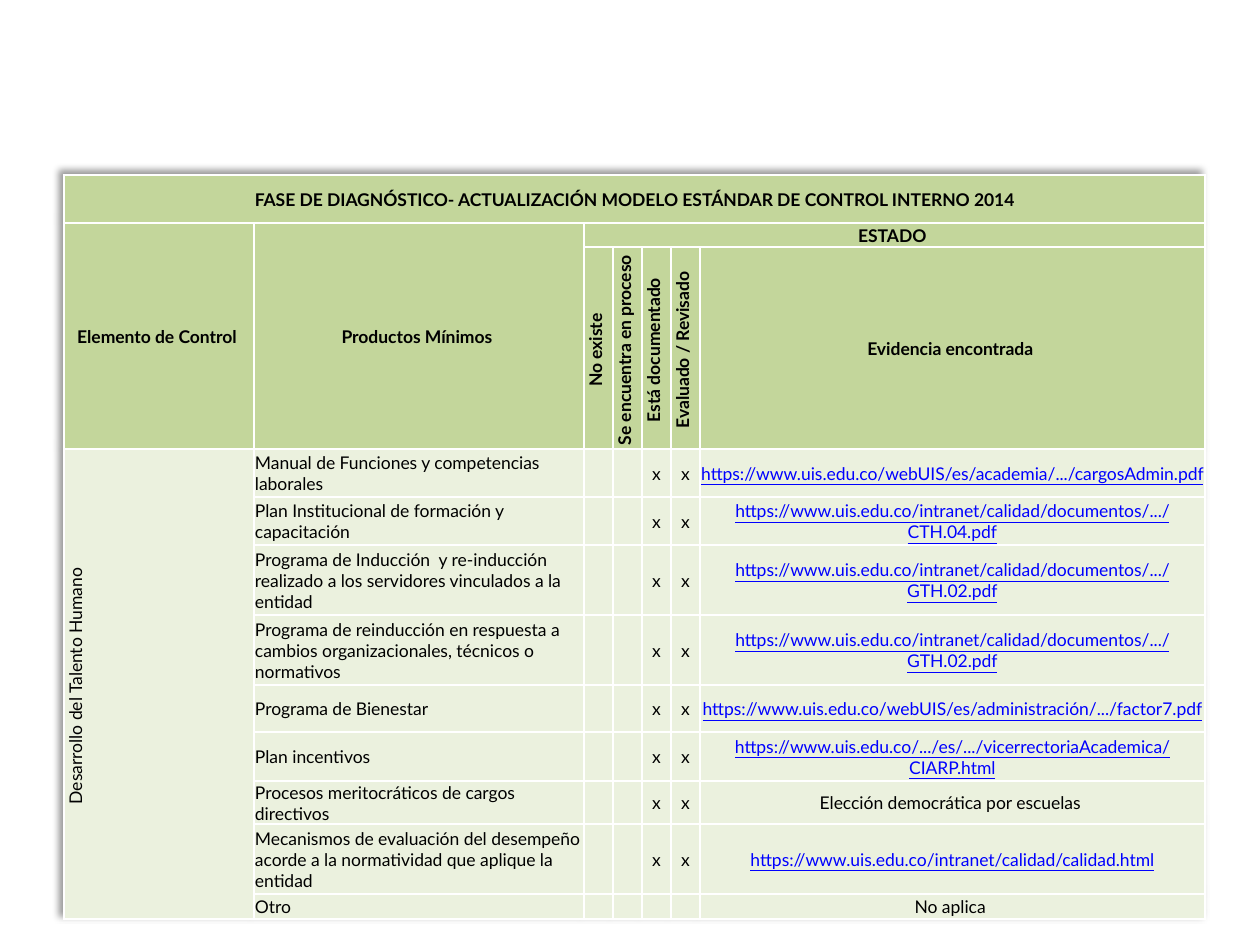
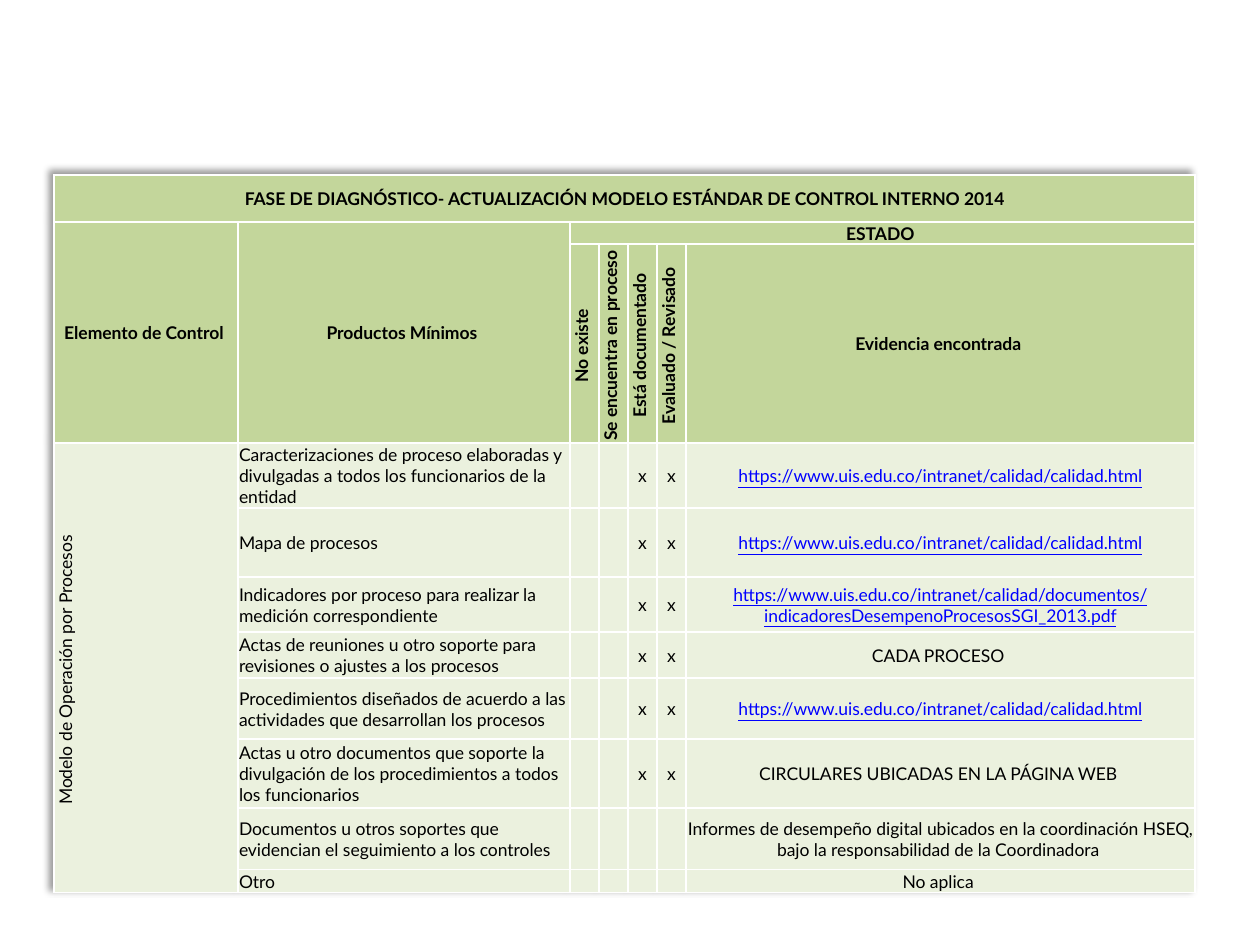
from dataclasses import dataclass

from lxml.etree import SubElement
from pptx import Presentation
from pptx.dml.color import RGBColor
from pptx.enum.text import MSO_ANCHOR, PP_ALIGN
from pptx.oxml import parse_xml
from pptx.oxml.ns import nsdecls, qn
from pptx.util import Pt

PX_PER_INCH = 126
BLANK_LAYOUT = 6
TABLE_TOP = 175
STATE_WIDTH = 29
CELL_MARGIN = 1
FIRST_PRODUCT_ROW = 3

HEADING = "FASE DE DIAGNÓSTICO- ACTUALIZACIÓN MODELO ESTÁNDAR DE CONTROL INTERNO 2014"
STATES = ["No existe ", "Se encuentra en proceso ", "Está documentado ", "Evaluado / Revisado "]
NOT_MET = ["", "", "", ""]
DOCUMENTED_AND_REVIEWED = ["", "", "x", "x"]
QUALITY_PAGE = "https://www.uis.edu.co/intranet/calidad/calidad.html"
QUALITY_DOCUMENTS = "https://www.uis.edu.co/intranet/calidad/documentos/"


@dataclass(frozen=True)
class Theme:
    font: str = "Lato"
    size: int = 10
    text: str = "000000"
    link: str = "0000FF"
    header: str = "C3D69B"
    body: str = "EBF1DE"
    border: str = "FFFFFF"
    border_width: int = 1


@dataclass(frozen=True)
class Product:
    height: int
    name: str
    evidence: str
    states: list


@dataclass(frozen=True)
class ControlElement:
    name: str
    left: int
    element_width: int
    product_width: int
    evidence_width: int
    header_heights: list
    products: list


THEME = Theme()

HUMAN_TALENT = ControlElement(
    "Desarrollo del Talento Humano ", 64, 190, 330, 505, [48, 24, 202],
    [
        Product(48, "Manual de Funciones y competencias laborales",
                "https://www.uis.edu.co/webUIS/es/academia/.../cargosAdmin.pdf", DOCUMENTED_AND_REVIEWED),
        Product(48, "Plan Institucional de formación y capacitación",
                QUALITY_DOCUMENTS + ".../CTH.04.pdf", DOCUMENTED_AND_REVIEWED),
        Product(70, "Programa de Inducción  y re-inducción realizado a los servidores vinculados a la entidad",
                QUALITY_DOCUMENTS + ".../GTH.02.pdf", DOCUMENTED_AND_REVIEWED),
        Product(70, "Programa de reinducción en respuesta a cambios organizacionales, técnicos o normativos",
                QUALITY_DOCUMENTS + ".../GTH.02.pdf", DOCUMENTED_AND_REVIEWED),
        Product(47, "Programa de Bienestar",
                "https://www.uis.edu.co/webUIS/es/administración/.../factor7.pdf", DOCUMENTED_AND_REVIEWED),
        Product(49, "Plan incentivos",
                "https://www.uis.edu.co/.../es/.../vicerrectoriaAcademica/CIARP.html", DOCUMENTED_AND_REVIEWED),
        Product(43, "Procesos meritocráticos de cargos directivos",
                "Elección democrática por escuelas ", DOCUMENTED_AND_REVIEWED),
        Product(70, "Mecanismos de evaluación del desempeño acorde a la normatividad que aplique la entidad",
                QUALITY_PAGE, DOCUMENTED_AND_REVIEWED),
        Product(25, "Otro", "No aplica ", NOT_MET),
    ],
)

PROCESS_MODEL = ControlElement(
    "Modelo de Operación por Procesos ", 54, 184, 332, 509, [47, 22, 199],
    [
        Product(65, "Caracterizaciones de proceso elaboradas y divulgadas a todos los funcionarios de la entidad",
                QUALITY_PAGE, DOCUMENTED_AND_REVIEWED),
        Product(69, "Mapa de procesos", QUALITY_PAGE, DOCUMENTED_AND_REVIEWED),
        Product(55, "Indicadores por proceso para realizar la medición correspondiente",
                QUALITY_DOCUMENTS + "indicadoresDesempenoProcesosSGI_2013.pdf", DOCUMENTED_AND_REVIEWED),
        Product(46, "Actas de reuniones u otro soporte para revisiones o ajustes a los procesos",
                "CADA PROCESO ", DOCUMENTED_AND_REVIEWED),
        Product(61, "Procedimientos diseñados de acuerdo a las actividades que desarrollan los procesos",
                QUALITY_PAGE, DOCUMENTED_AND_REVIEWED),
        Product(69, "Actas u otro documentos que soporte la divulgación de los procedimientos a todos los funcionarios",
                "CIRCULARES UBICADAS EN LA PÁGINA WEB ", DOCUMENTED_AND_REVIEWED),
        Product(62, "Documentos u otros soportes que evidencian el seguimiento a los controles",
                "Informes de desempeño digital ubicados en la coordinación HSEQ, "
                "bajo la responsabilidad de la Coordinadora ", NOT_MET),
        Product(23, "Otro", "No aplica ", NOT_MET),
    ],
)


def px(length):
    return round(length * 914400 / PX_PER_INCH)


def add_borders(cell):
    properties = cell._tc.get_or_add_tcPr()
    for side in ("lnL", "lnR", "lnT", "lnB"):
        line = SubElement(properties, qn(f"a:{side}"), w=str(Pt(THEME.border_width)))
        fill = SubElement(line, qn("a:solidFill"))
        SubElement(fill, qn("a:srgbClr"), val=THEME.border)


def format_cell(cell, fill):
    cell.margin_left = cell.margin_right = cell.margin_top = px(CELL_MARGIN)
    cell.margin_bottom = 0
    cell.vertical_anchor = MSO_ANCHOR.MIDDLE
    add_borders(cell)
    cell.fill.solid()
    cell.fill.fore_color.rgb = RGBColor.from_string(fill)


def write(cell, text, bold=False, align=PP_ALIGN.CENTER, upright=False):
    paragraph = cell.text_frame.paragraphs[0]
    paragraph.text = text
    paragraph.alignment = align
    if upright:
        cell._tc.get_or_add_tcPr().set("vert", "vert270")
    if not text:
        SubElement(paragraph._p, qn("a:endParaRPr"), sz=str(THEME.size * 100))
    is_link = text.startswith("https://")
    for run in paragraph.runs:
        run.font.name = THEME.font
        run.font.size = Pt(THEME.size)
        run.font.bold = bold
        run.font.underline = is_link
        run.font.color.rgb = RGBColor.from_string(THEME.link if is_link else THEME.text)


def add_table_shadow(table):
    table._tbl.tblPr.insert(0, parse_xml(
        f'<a:effectLst {nsdecls("a")}>'
        '<a:outerShdw blurRad="50800" dist="38100" dir="13500000" algn="br" rotWithShape="0">'
        '<a:srgbClr val="000000"><a:alpha val="40000"/></a:srgbClr>'
        '</a:outerShdw></a:effectLst>'))


def add_grid(slide, left, widths, heights):
    table = slide.shapes.add_table(
        len(heights), len(widths), px(left), px(TABLE_TOP), px(sum(widths)), px(sum(heights))).table
    table.first_row = table.horz_banding = False
    add_table_shadow(table)
    for column, width in zip(table.columns, widths):
        column.width = px(width)
    for index, (row, height) in enumerate(zip(table.rows, heights)):
        row.height = px(height)
        for cell in row.cells:
            format_cell(cell, THEME.header if index < FIRST_PRODUCT_ROW else THEME.body)
            if not cell.text_frame.text:
                cell.text_frame.word_wrap = True
    return table


def write_header(table):
    evidence = len(table.columns) - 1
    table.cell(0, 0).merge(table.cell(0, evidence))
    table.cell(1, 0).merge(table.cell(2, 0))
    table.cell(1, 1).merge(table.cell(2, 1))
    table.cell(1, 2).merge(table.cell(1, evidence))
    write(table.cell(0, 0), HEADING, bold=True)
    write(table.cell(1, 0), "Elemento de Control ", bold=True)
    write(table.cell(1, 1), "Productos Mínimos ", bold=True)
    write(table.cell(1, 2), "ESTADO ", bold=True)
    for column, state in enumerate(STATES, start=2):
        write(table.cell(2, column), state, bold=True, upright=True)
    write(table.cell(2, evidence), "Evidencia encontrada ", bold=True)


def write_products(table, element):
    first = table.cell(FIRST_PRODUCT_ROW, 0)
    first.merge(table.cell(len(table.rows) - 1, 0))
    write(first, element.name, upright=True)
    for row, product in enumerate(element.products, start=FIRST_PRODUCT_ROW):
        write(table.cell(row, 1), product.name, align=PP_ALIGN.LEFT)
        for column, text in enumerate([*product.states, product.evidence], start=2):
            write(table.cell(row, column), text)


def add_diagnosis_slide(presentation, element):
    slide = presentation.slides.add_slide(presentation.slide_layouts[BLANK_LAYOUT])
    widths = [element.element_width, element.product_width,
              *[STATE_WIDTH] * len(STATES), element.evidence_width]
    heights = element.header_heights + [product.height for product in element.products]
    table = add_grid(slide, element.left, widths, heights)
    write_header(table)
    write_products(table, element)


def main():
    presentation = Presentation()
    presentation.slide_width = px(1260)
    presentation.slide_height = px(945)
    for element in (HUMAN_TALENT, PROCESS_MODEL):
        add_diagnosis_slide(presentation, element)
    presentation.save("out.pptx")


if __name__ == "__main__":
    main()
